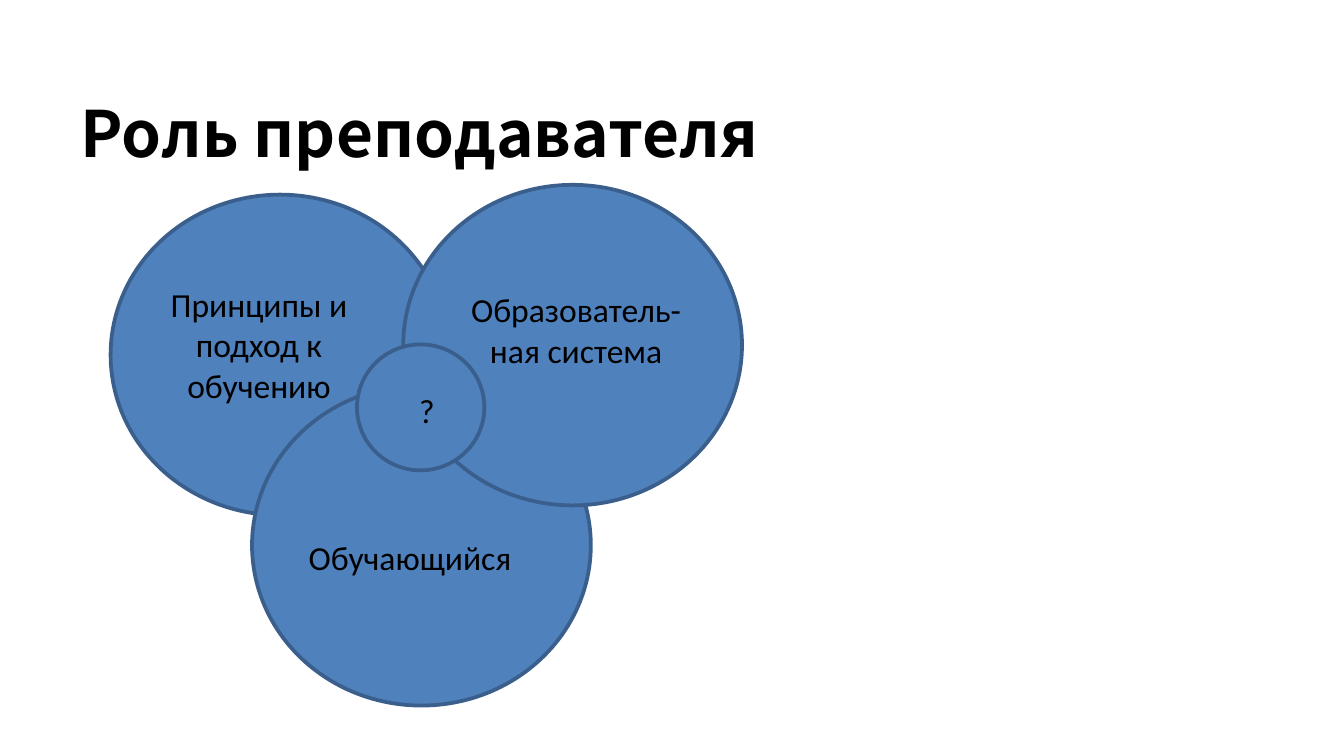
from pptx import Presentation
from pptx.dml.color import RGBColor
from pptx.enum.shapes import MSO_SHAPE
from pptx.enum.text import MSO_ANCHOR, PP_ALIGN
from pptx.util import Emu, Pt

OVAL = MSO_SHAPE.OVAL
MIDDLE = MSO_ANCHOR.MIDDLE
LEFT, CENTER = PP_ALIGN.LEFT, PP_ALIGN.CENTER

PX = 9525  # 96 px to the inch
SLIDE_SIZE = (960, 540)
COLORS = {"fill": "4F81BD", "line": "3A5F8C", "text": "000000"}
TITLE_FONT, LABEL_FONT = "Noto Sans CJK KR", "Calibri"

TITLE = "Роль преподавателя"
TITLE_AREA = (48, 49, 864, 90)
BIG, SMALL = (242, 229), (91, 90)
# left, top, size; from back to front
CIRCLES = [
    (79, 139, BIG),
    (180, 275, BIG),
    (288, 132, BIG),
    (255, 246, SMALL),
]
# text, area, alignment
LABELS = [
    ("?", (280, 274, 50, 38), CENTER),
    ("Образователь-ная система", (321, 202, 181, 67), CENTER),
    ("Обучающийся", (211, 379, 180, 38), LEFT),
    ("Принципы и подход к обучению", (79, 198, 212, 96), CENTER),
]


def emu(*lengths):
    return [Emu(length * PX) for length in lengths]


def color(name):
    return RGBColor.from_string(COLORS[name])


def write(frame, text, font_name, size, align, bold=False):
    frame.word_wrap = True
    frame.text = text
    paragraph = frame.paragraphs[0]
    paragraph.alignment = align
    font = paragraph.runs[0].font
    font.name, font.size, font.bold = font_name, Pt(size), bold
    font.color.rgb = color("text")


def add_circle(page, left, top, size):
    circle = page.shapes.add_shape(OVAL, *emu(left, top, *size))
    circle.shadow.inherit = False
    circle.fill.solid()
    circle.fill.fore_color.rgb = color("fill")
    circle.line.color.rgb = color("line")
    circle.line.width = Pt(2)


def main():
    deck = Presentation()
    deck.slide_width, deck.slide_height = emu(*SLIDE_SIZE)
    page = deck.slides.add_slide(deck.slide_layouts[5])

    title = page.shapes.title
    title.left, title.top, title.width, title.height = emu(*TITLE_AREA)
    write(title.text_frame, TITLE, TITLE_FONT, 34.2, LEFT, bold=True)
    title.text_frame.vertical_anchor = MIDDLE

    for left, top, size in CIRCLES:
        add_circle(page, left, top, size)
    for text, area, align in LABELS:
        box = page.shapes.add_textbox(*emu(*area))
        write(box.text_frame, text, LABEL_FONT, 18, align)

    deck.save("out.pptx")


if __name__ == "__main__":
    main()
